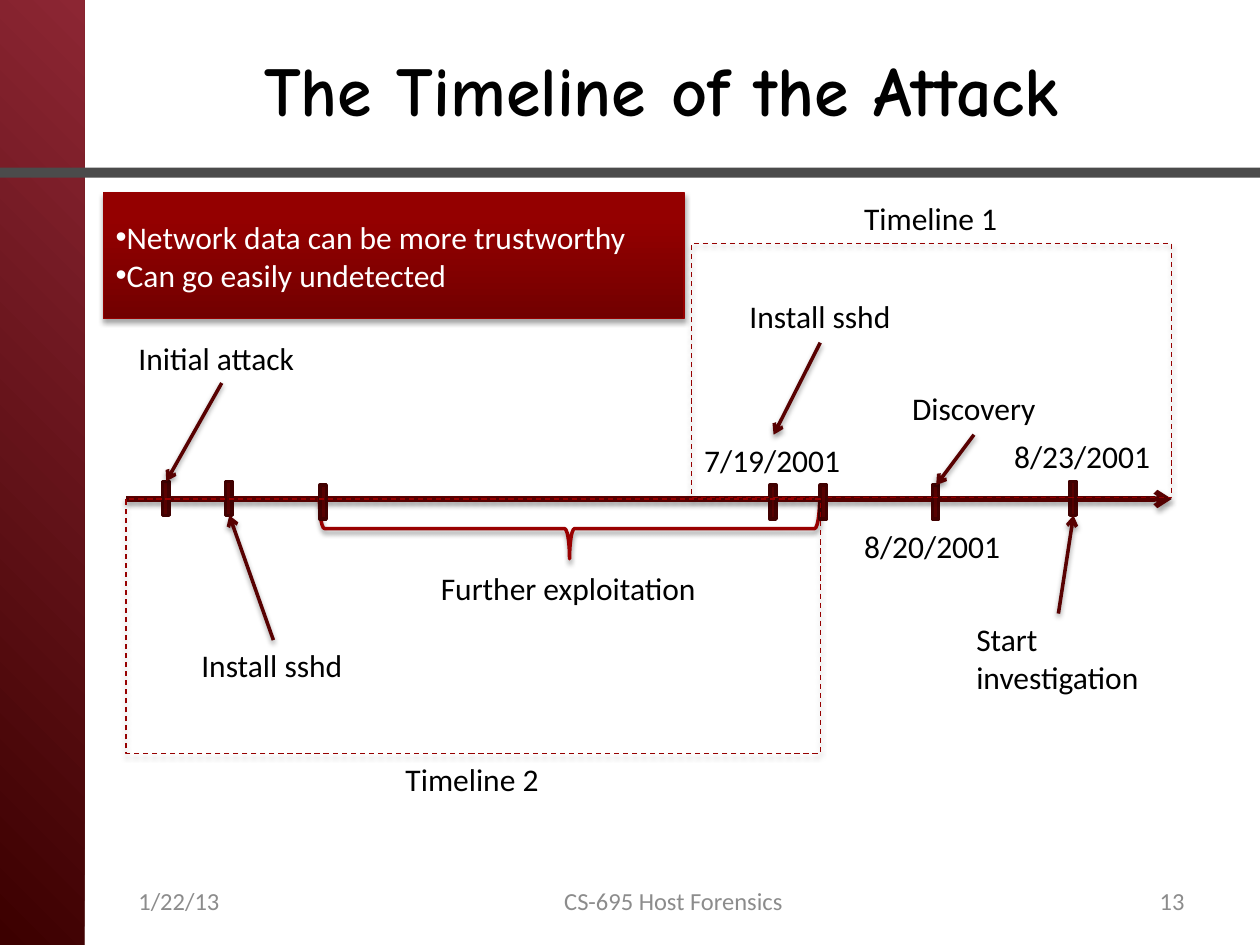
from dataclasses import dataclass

from lxml.etree import SubElement
from pptx import Presentation
from pptx.dml.color import RGBColor
from pptx.enum.dml import MSO_LINE
from pptx.enum.shapes import MSO_CONNECTOR, MSO_SHAPE
from pptx.enum.text import MSO_ANCHOR, PP_ALIGN
from pptx.oxml.ns import qn
from pptx.util import Inches, Pt

BLACK = RGBColor(0x00, 0x00, 0x00)
WHITE = RGBColor(0xFF, 0xFF, 0xFF)
GRAY = RGBColor(0x8C, 0x8C, 0x8C)
CHARCOAL = RGBColor(0x4B, 0x4B, 0x4B)
MAROON = RGBColor(0x58, 0x01, 0x01)
DARK_MAROON = RGBColor(0x41, 0x01, 0x01)
RED = RGBColor(0x96, 0x00, 0x00)
BRACE_RED = RGBColor(0x99, 0x00, 0x00)
SIDE_DARK = RGBColor(0x3C, 0x00, 0x00)
SIDE_LIGHT = RGBColor(0x8C, 0x26, 0x33)
CALLOUT_DARK = RGBColor(0x72, 0x00, 0x00)
CALLOUT_LIGHT = RGBColor(0x94, 0x00, 0x00)

WIDTH, HEIGHT = Inches(10), Inches(7.5)
COLUMN, ROW = WIDTH / 100, HEIGHT / 75


@dataclass
class Box:
    """An area in grid columns and rows."""
    left: float
    top: float
    width: float
    height: float

    def area(self, left, top, width, height):
        """Return an area offset from this one's top left corner."""
        return Box(self.left + left, self.top + top, width, height)

    def lengths(self):
        """Return the area as slide lengths."""
        return (round(self.left * COLUMN), round(self.top * ROW),
                round(self.width * COLUMN), round(self.height * ROW))


def add_shadow(shape, opacity=35):
    """Give a shape a soft shadow straight below it."""
    properties = shape._element.spPr
    for effects in properties.findall(qn("a:effectLst")):
        properties.remove(effects)
    effects = SubElement(properties, qn("a:effectLst"))
    shadow = SubElement(effects, qn("a:outerShdw"), blurRad=str(Pt(3.1)),
                        dist=str(Pt(1.8)), dir="5400000", rotWithShape="0")
    color = SubElement(shadow, qn("a:srgbClr"), val=str(BLACK))
    SubElement(color, qn("a:alpha"), val=str(opacity * 1000))


def add_shape(slide, box, fill=None, line=None, weight=1, kind=MSO_SHAPE.RECTANGLE):
    """Add a preset shape with a plain fill and outline."""
    shape = slide.shapes.add_shape(kind, *box.lengths())
    shape.shadow.inherit = False
    if fill is None:
        shape.fill.background()
    else:
        shape.fill.solid()
        shape.fill.fore_color.rgb = fill
    if line is None:
        shape.line.fill.background()
    else:
        shape.line.color.rgb = line
        shape.line.width = Pt(weight)
    return shape


def fill_gradient(shape, angle, stops):
    """Fill a shape with a two-colour gradient."""
    shape.fill.gradient()
    shape.fill.gradient_angle = angle
    for stop, (position, color) in zip(shape.fill.gradient_stops, stops):
        stop.position = position
        stop.color.rgb = color


def add_text(slide, box, text, size=18, color=BLACK, align=PP_ALIGN.LEFT,
             anchor=MSO_ANCHOR.TOP, wrap=False, font="Calibri", bold=False):
    """Add a text box in one format."""
    frame = slide.shapes.add_textbox(*box.lengths()).text_frame
    frame.word_wrap = wrap
    frame.vertical_anchor = anchor
    frame.text = text
    for paragraph in frame.paragraphs:
        paragraph.alignment = align
        paragraph.font.size = Pt(size)
        paragraph.font.name = font
        paragraph.font.bold = bold
        paragraph.font.color.rgb = color


def add_arrow(slide, box, start, end, weight=2, opacity=38):
    """Add an arrow between two points of a box."""
    points = [round((origin + offset) * unit) for point in (start, end)
              for origin, offset, unit in zip((box.left, box.top), point, (COLUMN, ROW))]
    arrow = slide.shapes.add_connector(MSO_CONNECTOR.STRAIGHT, *points)
    arrow.line.color.rgb = MAROON
    arrow.line.width = Pt(weight)
    SubElement(arrow.line._get_or_add_ln(), qn("a:tailEnd"), type="arrow")
    add_shadow(arrow, opacity)


def add_frame(slide, box):
    """Add the dashed frame of a timeline."""
    frame = add_shape(slide, box, line=RED, weight=0.75)
    frame.line.dash_style = MSO_LINE.DASH
    add_shadow(frame)


def add_events(slide, box, labels, ticks, arrows):
    """Place the labels, ticks and arrows of a timeline."""
    for text, *place in labels:
        add_text(slide, box.area(*place), text)
    for left, top in ticks:
        add_shape(slide, box.area(left, top, 0.5, 2.7), MAROON, DARK_MAROON, 2)
    for start, end in arrows:
        add_arrow(slide, box, start, end)
    add_frame(slide, box)


def add_backdrop(slide, box):
    """Draw the side band and the rule below the title."""
    band = add_shape(slide, box.area(0, 0, 6.7, box.height))
    fill_gradient(band, 45, [(0, SIDE_DARK), (1, SIDE_LIGHT)])
    add_shape(slide, box.area(0, 13.3, box.width, 0.8), CHARCOAL)


def add_title(slide, box):
    """Write the slide title."""
    add_text(slide, box, "The Timeline of the Attack", 40, align=PP_ALIGN.CENTER,
             anchor=MSO_ANCHOR.MIDDLE, wrap=True, font="Comic Neue", bold=True)


def add_footer(slide, box):
    """Write the date, course and slide number."""
    side = 18.3
    for text, left, width, align in (
            ("1/22/13", 0, side, PP_ALIGN.LEFT),
            ("CS-695 Host Forensics", 31, 24.9, PP_ALIGN.CENTER),
            ("13", box.width - side, side, PP_ALIGN.RIGHT)):
        add_text(slide, box.area(left, 0, width, box.height), text, 14, GRAY,
                 align, MSO_ANCHOR.MIDDLE, True)


def add_first_timeline(slide, box):
    """Draw the timeline above the axis."""
    add_events(
        slide, box,
        labels=[("Install sshd", 3.6, 3.8, 13.3, 4), ("7/19/2001", 0, 15.2, 12.9, 4),
                ("Discovery", 16.5, 11.1, 11.9, 4), ("8/20/2001", 12.7, 22, 12.9, 4),
                ("Start\ninvestigation", 21.6, 29.4, 15.1, 7.1),
                ("8/23/2001", 24.6, 14.9, 12.9, 4), ("Timeline 1", 12.7, -4, 12.7, 4)],
        ticks=[(6.2, 19.2), (19.1, 19.2), (30, 18.9)],
        arrows=[((10.2, 7.9), (6.5, 15.2)), ((22.4, 15.2), (19.4, 19.2)),
                ((29.1, 29.4), (30.3, 21.6))])


def add_second_timeline(slide, box):
    """Draw the timeline below the axis."""
    brace = add_shape(slide, box.area(32.8, -17.5, 4.8, 39.7), line=BRACE_RED,
                      weight=2, kind=MSO_SHAPE.RIGHT_BRACE)
    brace.rotation = 90
    add_shadow(brace, 38)
    add_events(
        slide, box,
        labels=[("Further exploitation", 24, 5.1, 22.5, 4), ("Install sshd", 5, 11.2, 13.3, 4),
                ("Initial attack", 0, -13.2, 15.2, 4),
                ("Timeline 2", 21.2, box.height, 12.7, 4)],
        ticks=[(55.1, -1.1), (15.4, -1.1), (7.9, -1.4), (2.9, -1.4)],
        arrows=[((11.7, 11.2), (8.2, 1.3)), ((7.6, -9.2), (3.2, -1.4))])


def add_callout(slide, box):
    """Draw the red panel with its bulleted remarks."""
    panel = add_shape(slide, box, line=RED, weight=0.75)
    fill_gradient(panel, 90, [(0, CALLOUT_DARK), (0.8, CALLOUT_LIGHT)])
    add_shadow(panel)
    frame = panel.text_frame
    frame.word_wrap = True
    frame.vertical_anchor = MSO_ANCHOR.MIDDLE
    frame.text = "Network data can be more trustworthy\nCan go easily undetected"
    for paragraph in frame.paragraphs:
        properties = paragraph._p.get_or_add_pPr()
        SubElement(properties, qn("a:buFont"), typeface="Arial")
        SubElement(properties, qn("a:buChar"), char="•")
        paragraph.alignment = PP_ALIGN.LEFT
        paragraph.font.size = Pt(18)
        paragraph.font.name = "Calibri"
        paragraph.font.color.rgb = WHITE


def main():
    """Build and save the slide."""
    presentation = Presentation()
    presentation.slide_width, presentation.slide_height = WIDTH, HEIGHT
    slide = presentation.slides.add_slide(presentation.slide_layouts[6])
    add_backdrop(slide, Box(0, 0, 100, 75))
    add_title(slide, Box(10, 1.5, 85, 11))
    add_footer(slide, Box(10, 69.5, 85, 4))
    add_arrow(slide, Box(10, 39.6, 83, 0), (0, 0), (83, 0), 3, 35)
    add_first_timeline(slide, Box(54.9, 19.3, 38.1, 20.2))
    add_second_timeline(slide, Box(10, 39.6, 55.1, 20.2))
    add_callout(slide, Box(8.2, 15.3, 46.1, 10))
    presentation.save("out.pptx")


if __name__ == "__main__":
    main()
